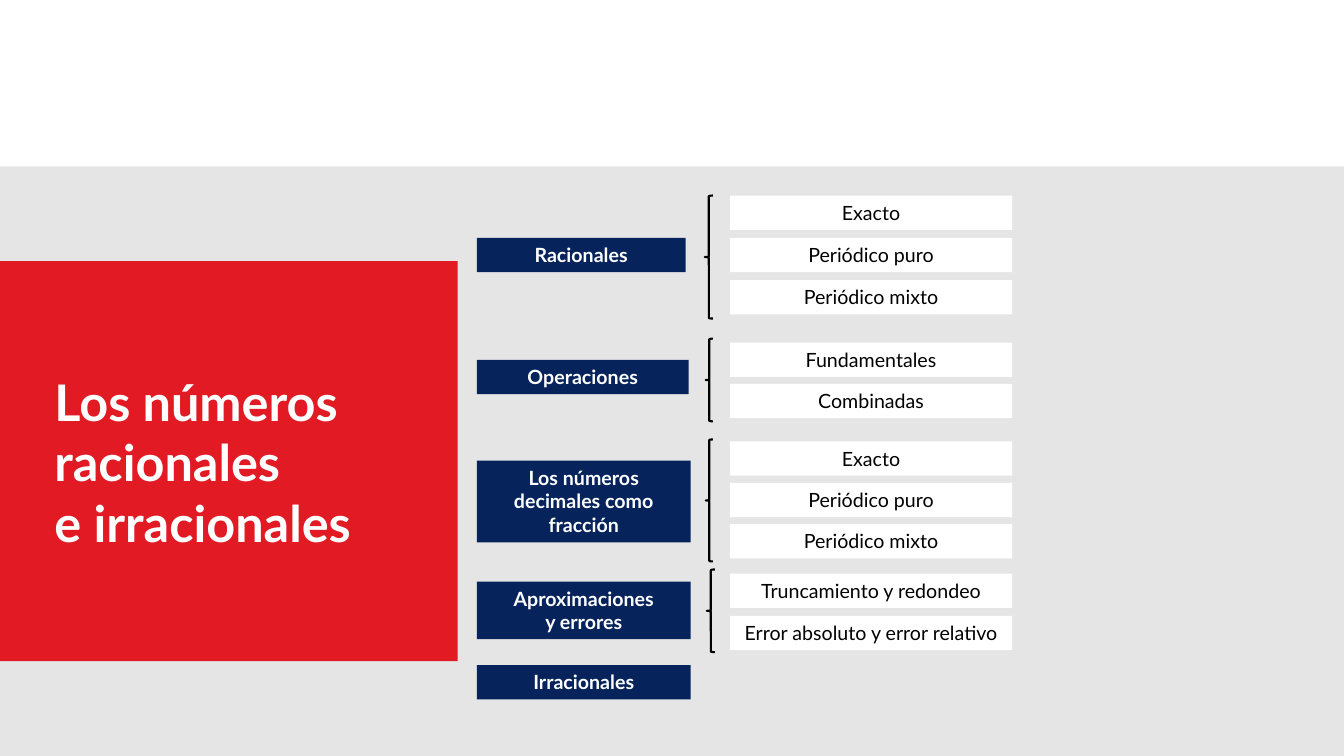
from dataclasses import dataclass

from pptx import Presentation
from pptx.dml.color import RGBColor
from pptx.enum.shapes import MSO_SHAPE as Shape
from pptx.enum.text import MSO_ANCHOR as Anchor, MSO_AUTO_SIZE as AutoSize, PP_ALIGN as Align
from pptx.shapes.autoshape import Shape as AutoShape
from pptx.slide import Slide
from pptx.text.text import _Paragraph as Paragraph
from pptx.util import Inches, Pt


@dataclass(frozen=True)
class Theme:
    font: str = "Lato"
    title_size: int = 36
    label_size: int = 14
    brace_width: float = 1.5
    white: str = "FFFFFF"
    black: str = "000000"
    grey: str = "E5E5E5"
    red: str = "E21A23"
    navy: str = "06235B"


@dataclass(frozen=True)
class Area:
    left: float
    top: float
    width: float
    height: float

    def lengths(self) -> tuple[int, int, int, int]:
        return Inches(self.left), Inches(self.top), Inches(self.width), Inches(self.height)


@dataclass(frozen=True)
class Topic:
    """A navy heading with its brace and the rows to its right."""
    lines: tuple[str, ...]
    area: Area
    brace: Area | None = None
    rows: tuple[str, ...] = ()
    first_row: float = 0
    row_pitch: float = 0.42


THEME = Theme()
SLIDE_WIDTH, SLIDE_HEIGHT = 13.33, 7.5
BACKDROP = Area(0, 1.65, SLIDE_WIDTH, 5.85)
TITLE_PANEL = Area(0, 2.59, 4.54, 3.97)
TITLE_AREA = Area(0.44, 3.63, 3.97, 1.92)
TITLE_LINES = ("Los números racionales", "e irracionales")
TOPIC_LEFT = 4.73
ROW_LEFT, ROW_WIDTH, ROW_HEIGHT = 7.24, 2.8, 0.34
DECIMAL_KINDS = ("Exacto", "Periódico puro", "Periódico mixto")

TOPICS = (
    Topic(("Racionales",), Area(TOPIC_LEFT, 2.36, 2.07, ROW_HEIGHT),
          Area(6.99, 1.94, 0.08, 1.22), DECIMAL_KINDS, 1.94),
    Topic(("Operaciones",), Area(TOPIC_LEFT, 3.57, 2.1, ROW_HEIGHT),
          Area(7, 3.36, 0.07, 0.82), ("Fundamentales", "Combinadas"), 3.4, 0.41),
    Topic(("Los números decimales como fracción",), Area(TOPIC_LEFT, 4.57, 2.12, 0.81),
          Area(7, 4.36, 0.07, 1.21), DECIMAL_KINDS, 4.38, 0.41),
    Topic(("Aproximaciones", "y errores"), Area(TOPIC_LEFT, 5.77, 2.12, 0.57),
          Area(7.01, 5.65, 0.08, 0.82),
          ("Truncamiento y redondeo", "Error absoluto y error relativo"), 5.69),
    Topic(("Irracionales",), Area(TOPIC_LEFT, 6.6, 2.12, ROW_HEIGHT)),
)


def add_span(para: Paragraph, text: str, size: int, color: str, bold: bool) -> None:
    span = para.add_run()
    span.text = text
    span.font.name = THEME.font
    span.font.size = Pt(size)
    span.font.bold = bold
    span.font.color.rgb = RGBColor.from_string(color)


def add_panel(page: Slide, area: Area, fill: str) -> AutoShape:
    panel = page.shapes.add_shape(Shape.RECTANGLE, *area.lengths())
    panel.shadow.inherit = False
    panel.fill.solid()
    panel.fill.fore_color.rgb = RGBColor.from_string(fill)
    panel.line.fill.background()
    return panel


def add_label(page: Slide, area: Area, lines: tuple[str, ...],
              fill: str, color: str, bold: bool = False) -> None:
    frame = add_panel(page, area, fill).text_frame
    frame.word_wrap = True
    frame.auto_size = AutoSize.SHAPE_TO_FIT_TEXT
    frame.vertical_anchor = Anchor.TOP
    for index, line in enumerate(lines):
        para = frame.add_paragraph() if index else frame.paragraphs[0]
        para.alignment = Align.CENTER
        add_span(para, line, THEME.label_size, color, bold)


def add_brace(page: Slide, area: Area) -> None:
    brace = page.shapes.add_shape(Shape.LEFT_BRACE, *area.lengths())
    brace.shadow.inherit = False
    brace.fill.background()
    brace.line.color.rgb = RGBColor.from_string(THEME.black)
    brace.line.width = Pt(THEME.brace_width)


def add_topic(page: Slide, topic: Topic) -> None:
    add_label(page, topic.area, topic.lines, THEME.navy, THEME.white, bold=True)
    for index, row in enumerate(topic.rows):
        top = topic.first_row + index * topic.row_pitch
        add_label(page, Area(ROW_LEFT, top, ROW_WIDTH, ROW_HEIGHT), (row,),
                  THEME.white, THEME.black)
    if topic.brace:
        add_brace(page, topic.brace)


def place_title(page: Slide) -> None:
    """Fill the title placeholder and raise it above the panels."""
    title = page.shapes.title
    title.left, title.top, title.width, title.height = TITLE_AREA.lengths()
    frame = title.text_frame
    frame.word_wrap = True
    frame.auto_size = AutoSize.SHAPE_TO_FIT_TEXT
    frame.vertical_anchor = Anchor.TOP
    para = frame.paragraphs[0]
    para.alignment = Align.LEFT
    for index, line in enumerate(TITLE_LINES):
        if index:
            para.add_line_break()
        add_span(para, line, THEME.title_size, THEME.white, bold=True)
    title.element.getparent().append(title.element)


def main() -> None:
    deck = Presentation()
    deck.slide_width, deck.slide_height = Inches(SLIDE_WIDTH), Inches(SLIDE_HEIGHT)
    page = deck.slides.add_slide(deck.slide_layouts.get_by_name("Title Only"))
    add_panel(page, BACKDROP, THEME.grey)
    add_panel(page, TITLE_PANEL, THEME.red)
    place_title(page)
    for topic in TOPICS:
        add_topic(page, topic)
    deck.save("out.pptx")


if __name__ == "__main__":
    main()
